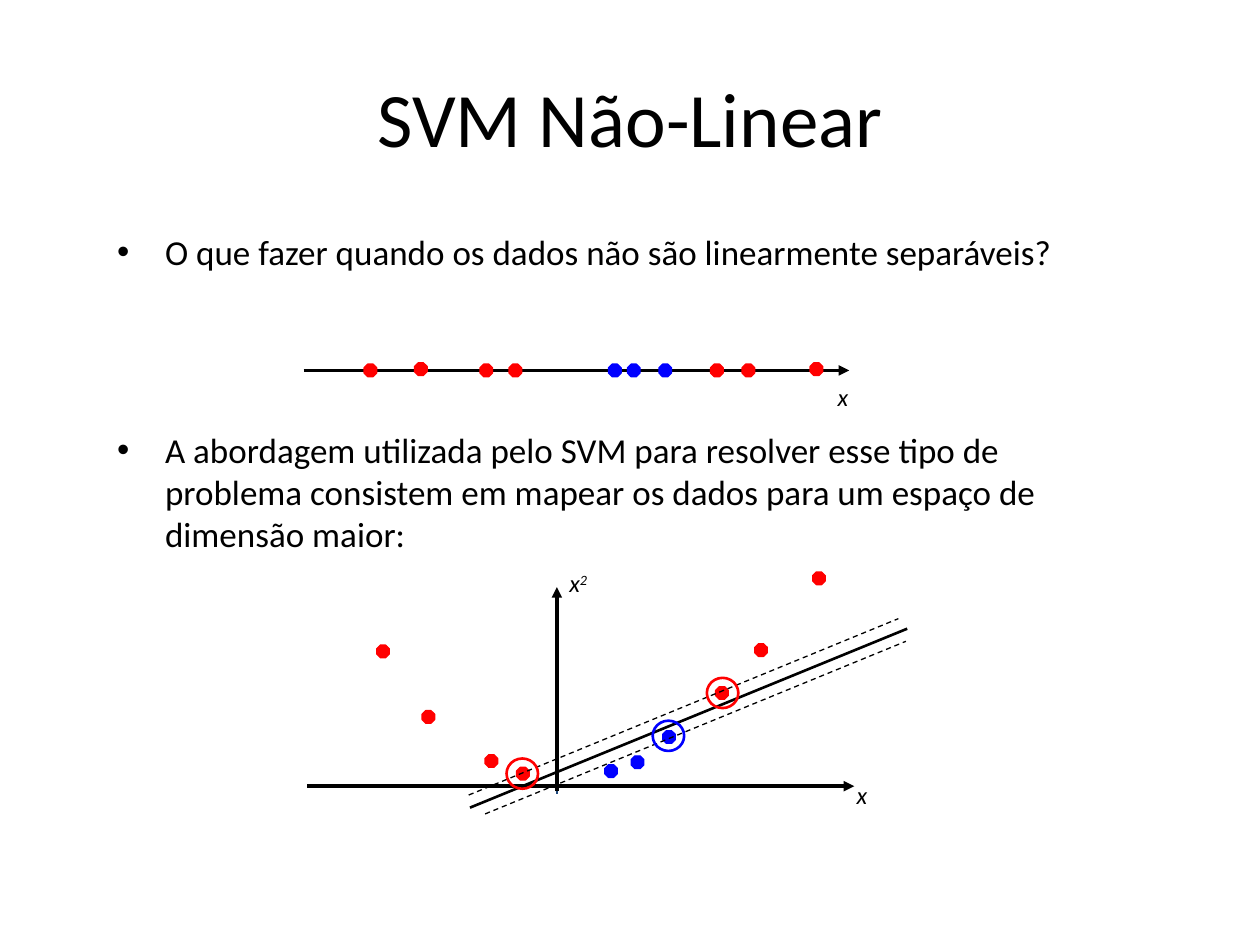
"""Build the slide on non-linear SVM: data on a line and in a mapped space."""
from dataclasses import dataclass

from lxml.etree import SubElement
from pptx import Presentation
from pptx.dml.color import RGBColor
from pptx.enum.dml import MSO_LINE_DASH_STYLE as Dash
from pptx.enum.shapes import MSO_CONNECTOR as Connector, MSO_SHAPE as Preset
from pptx.enum.text import MSO_ANCHOR as Anchor, MSO_AUTO_SIZE as AutoSize, PP_ALIGN as Align
from pptx.oxml.ns import qn
from pptx.util import Inches, Pt


@dataclass(frozen=True)
class Theme:
    """Colours, font and type sizes of the slide."""
    font: str = "Calibri"
    ink: str = "000000"
    red: str = "FF0000"
    blue: str = "0000FF"
    tick: str = "1F497D"
    title: int = 44
    body: int = 20
    label: int = 14


THEME = Theme()
DOT = 0.1
RING = (0.25, 0.24)
INDENT = 0.38
LINE_DOTS = {
    THEME.red: [(2.89, 2.89), (3.29, 2.88), (3.81, 2.89), (4.04, 2.89),
                (5.64, 2.89), (5.89, 2.89), (6.43, 2.88)],
    THEME.blue: [(4.83, 2.89), (4.98, 2.89), (5.23, 2.89)],
}
MAPPED_DOTS = {
    THEME.red: [(2.99, 5.12), (3.35, 5.64), (3.85, 5.99), (4.1, 6.09),
                (5.68, 5.45), (5.99, 5.11), (6.45, 4.54)],
    THEME.blue: [(4.8, 6.07), (5.01, 6), (5.26, 5.8)],
}
SUPPORT_VECTORS = [(5.61, 5.38, THEME.red), (5.18, 5.72, THEME.blue), (4.02, 6.02, THEME.red)]
MARGINS = [((3.72, 6.31), (7.13, 4.91)), ((3.85, 6.46), (7.19, 5.09))]


def write_text(paragraph, text, size=THEME.body, italic=False, align=None,
               space_before=0, superscript=False):
    """Append a formatted run to a paragraph."""
    paragraph.space_before = Pt(space_before)
    if align is not None:
        paragraph.alignment = align
    run = paragraph.add_run()
    run.text = text
    run.font.name = THEME.font
    run.font.size = Pt(size)
    run.font.italic = italic
    run.font.color.rgb = RGBColor.from_string(THEME.ink)
    if superscript:
        run.font._element.set("baseline", "30000")


def place(shape, left, top, width, height):
    """Move and size a placeholder."""
    shape.left, shape.top = Inches(left), Inches(top)
    shape.width, shape.height = Inches(width), Inches(height)
    shape.text_frame.auto_size = AutoSize.NONE
    shape.text_frame.word_wrap = True


def add_bullet(paragraph):
    """Give a paragraph a bullet with a hanging indent."""
    properties = paragraph._p.get_or_add_pPr()
    properties.set("marL", str(Inches(INDENT)))
    properties.set("indent", str(-Inches(INDENT)))
    SubElement(properties, qn("a:buFont"), typeface="Arial")
    SubElement(properties, qn("a:buChar"), char="•")


def fill_title(shape, text):
    """Write the slide title."""
    place(shape, 0.5, 0.3, 9, 1.25)
    shape.text_frame.vertical_anchor = Anchor.MIDDLE
    write_text(shape.text_frame.paragraphs[0], text, size=THEME.title, align=Align.CENTER)


def fill_body(shape, items):
    """Write the bullets, given as pairs of text and space before."""
    place(shape, 0.83, 1.78, 8.27, 4.49)
    frame = shape.text_frame
    for index, (text, space_before) in enumerate(items):
        paragraph = frame.add_paragraph() if index else frame.paragraphs[0]
        add_bullet(paragraph)
        write_text(paragraph, text, space_before=space_before)


def add_line(group, start, end, width, color=THEME.ink, dashed=False, arrow=False):
    """Draw a straight line, with a dash or an arrowhead on request."""
    ends = [Inches(value) for value in (*start, *end)]
    connector = group.shapes.add_connector(Connector.STRAIGHT, *ends)
    connector.line.width = Pt(width)
    connector.line.color.rgb = RGBColor.from_string(color)
    if dashed:
        connector.line.dash_style = Dash.DASH
    if arrow:
        SubElement(connector.line._get_or_add_ln(), qn("a:tailEnd"), type="triangle")
    SubElement(connector._element.spPr, qn("a:effectLst"))


def add_marker(group, preset, left, top, width, height, color, line_width, filled):
    """Draw a dot or a ring."""
    box = [Inches(value) for value in (left, top, width, height)]
    marker = group.shapes.add_shape(preset, *box)
    marker.shadow.inherit = False
    if filled:
        marker.fill.solid()
        marker.fill.fore_color.rgb = RGBColor.from_string(color)
    else:
        marker.fill.background()
    marker.line.color.rgb = RGBColor.from_string(color)
    marker.line.width = Pt(line_width)


def add_dots(group, dots):
    """Draw the data points of each class colour."""
    for color, positions in dots.items():
        for left, top in positions:
            add_marker(group, Preset.OCTAGON, left, top, DOT, DOT, color, 0.75, True)


def add_label(group, left, top, text, exponent=""):
    """Write an axis name, with an optional exponent."""
    box = group.shapes.add_textbox(Inches(left), Inches(top), Inches(0.5), Inches(0.34))
    box.text_frame.word_wrap = True
    paragraph = box.text_frame.paragraphs[0]
    write_text(paragraph, text, size=THEME.label, italic=True)
    if exponent:
        write_text(paragraph, exponent, size=THEME.label, italic=True, superscript=True)


def draw_line_data(group):
    """Draw the data on a single axis."""
    add_line(group, (2.41, 2.94), (6.74, 2.94), 2, arrow=True)
    add_dots(group, LINE_DOTS)
    add_label(group, 6.55, 2.98, "x")


def draw_mapped_data(group):
    """Draw the data in two dimensions with the separating line."""
    add_line(group, (2.44, 6.24), (6.78, 6.24), 2, arrow=True)
    add_line(group, (4.42, 6.18), (4.42, 6.3), 0.75, color=THEME.tick)
    add_dots(group, MAPPED_DOTS)
    add_line(group, (4.42, 6.28), (4.42, 4.66), 2, arrow=True)
    add_label(group, 4.42, 4.46, "x", exponent="2")
    add_label(group, 6.7, 6.14, "x")
    add_line(group, (3.73, 6.41), (7.2, 4.99), 1.5)
    for start, end in MARGINS:
        add_line(group, start, end, 0.75, dashed=True)
    for left, top, color in SUPPORT_VECTORS:
        add_marker(group, Preset.OVAL, left, top, *RING, color, 1.5, False)


def main():
    """Build and save the presentation."""
    presentation = Presentation()
    presentation.slide_width, presentation.slide_height = Inches(10), Inches(7.5)
    slide = presentation.slides.add_slide(presentation.slide_layouts[1])
    fill_title(slide.shapes.title, "SVM Não-Linear")
    fill_body(slide.placeholders[1], [
        ("O que fazer quando os dados não são linearmente separáveis?", 0),
        ("A abordagem utilizada pelo SVM para resolver esse tipo de problema "
         "consistem em mapear os dados para um espaço de dimensão maior:", 89),
    ])
    draw_line_data(slide.shapes.add_group_shape())
    draw_mapped_data(slide.shapes.add_group_shape())
    presentation.save("out.pptx")


if __name__ == "__main__":
    main()
